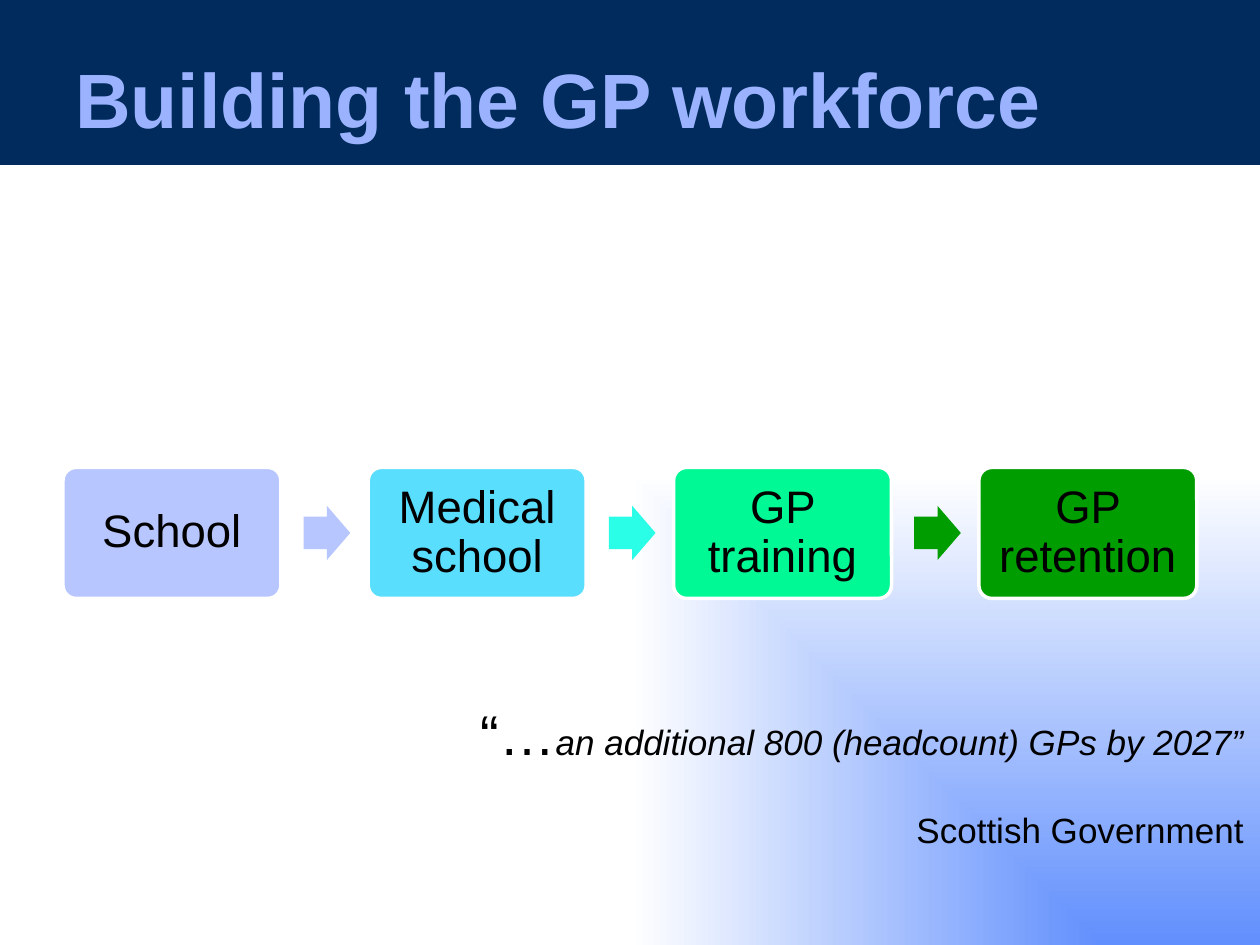
import pptx
import pptx.util
import pptx.oxml
import pptx.oxml.ns
import pptx.dml.color
import pptx.enum.shapes
import pptx.enum.text

Inches = pptx.util.Inches
Shape = pptx.enum.shapes.MSO_SHAPE
Align = pptx.enum.text.PP_ALIGN
Anchor = pptx.enum.text.MSO_ANCHOR

TITLE = "Building the GP workforce"
STAGES = [
    ("School", "B7C6FE", "B7C6FE"),
    ("Medical school", "5ADEFD", "2BFEE7"),
    ("GP training", "01F995", "009D00"),
    ("GP retention", "009D00", None),
]
QUOTE = [
    [("“…", "opening"), ("an additional 800 (headcount) GPs by 2027”", "quote")],
    [("Scottish Government", "source")],
]

THEME = {
    "banner": "002B5C",
    "outline": "FFFFFF",
    "glow": ("618FFD", "FFFFFF"),
    "title": {"size": 44, "color": "9BB3FF", "bold": True},
    "stage": {"size": 26, "color": "000000"},
    "opening": {"size": 32, "color": "000000"},
    "quote": {"size": 20, "color": "000000", "italic": True},
    "source": {"size": 20, "color": "000000"},
}

STAGE_LEFT, STAGE_TOP, STAGE_PITCH = 0.5, 3.71, 2.423
STAGE_WIDTH, STAGE_HEIGHT = 1.73, 1.04
ARROW_OFFSET, ARROW_WIDTH, ARROW_HEIGHT = 1.91, 0.37, 0.43


def rgb(value):
    return pptx.dml.color.RGBColor.from_string(value)


def set_attributes(target, values):
    for name, value in values.items():
        setattr(target, name, value)


def add_run(paragraph, text, style):
    run = paragraph.add_run()
    run.text = text
    values = dict(THEME[style], name="Arial")
    run.font.color.rgb = rgb(values.pop("color"))
    values["size"] = pptx.util.Pt(values["size"])
    set_attributes(run.font, values)


def add_filled_shape(slide, kind, box, color, adjustments=()):
    shape = slide.shapes.add_shape(kind, *map(Inches, box))
    shape.shadow.inherit = False
    shape.fill.solid()
    shape.fill.fore_color.rgb = rgb(color)
    shape.line.fill.background()
    for index, value in enumerate(adjustments):
        shape.adjustments[index] = value
    return shape


def add_text_box(slide, box):
    frame = slide.shapes.add_textbox(*map(Inches, box)).text_frame
    frame.word_wrap = True
    return frame


def set_background(slide):
    slide.background.fill.solid()
    solid = slide.element.find(".//" + pptx.oxml.ns.qn("a:solidFill"))
    stops = "".join(
        f'<a:gs pos="{position}"><a:srgbClr val="{color}"/></a:gs>'
        for position, color in zip((0, 100000), THEME["glow"])
    )
    gradient = pptx.oxml.parse_xml(
        f'<a:gradFill {pptx.oxml.ns.nsdecls("a")} rotWithShape="1"><a:gsLst>{stops}</a:gsLst>'
        '<a:path path="rect"><a:fillToRect l="100000" t="100000"/></a:path></a:gradFill>'
    )
    solid.getparent().replace(solid, gradient)


def add_stages(slide):
    arrow_top = STAGE_TOP + (STAGE_HEIGHT - ARROW_HEIGHT) / 2
    for index, (label, color, arrow_color) in enumerate(STAGES):
        left = STAGE_LEFT + index * STAGE_PITCH
        box = (left, STAGE_TOP, STAGE_WIDTH, STAGE_HEIGHT)
        shape = add_filled_shape(slide, Shape.ROUNDED_RECTANGLE, box, color, [0.1])
        shape.line.color.rgb = rgb(THEME["outline"])
        shape.line.width = pptx.util.Pt(2)
        frame = shape.text_frame
        margins = {f"margin_{side}": Inches(0.11) for side in ("left", "top", "right", "bottom")}
        set_attributes(frame, dict(margins, word_wrap=True, vertical_anchor=Anchor.MIDDLE))
        paragraph = frame.paragraphs[0]
        set_attributes(paragraph, {"alignment": Align.CENTER, "line_spacing": 0.9})
        add_run(paragraph, label, "stage")
        if arrow_color:
            arrow_box = (left + ARROW_OFFSET, arrow_top, ARROW_WIDTH, ARROW_HEIGHT)
            add_filled_shape(slide, Shape.RIGHT_ARROW, arrow_box, arrow_color, [0.6, 0.5])


def add_quote(slide):
    frame = add_text_box(slide, (2.88, 5.5, 7.09, 1.31))
    for index, runs in enumerate(QUOTE):
        paragraph = frame.add_paragraph() if index else frame.paragraphs[0]
        paragraph.alignment = Align.RIGHT
        if index:
            paragraph.space_before = pptx.util.Pt(24)
        for text, style in runs:
            add_run(paragraph, text, style)


def main():
    presentation = pptx.Presentation()
    set_attributes(presentation, {"slide_width": Inches(10), "slide_height": Inches(7.5)})
    slide = presentation.slides.add_slide(presentation.slide_layouts[6])
    set_background(slide)
    add_filled_shape(slide, Shape.RECTANGLE, (0, 0, 10, 1.31), THEME["banner"])
    title = add_text_box(slide, (0.5, 0.36, 9, 1.25))
    add_run(title.paragraphs[0], TITLE, "title")
    add_stages(slide)
    add_quote(slide)
    presentation.save("out.pptx")


if __name__ == "__main__":
    main()
